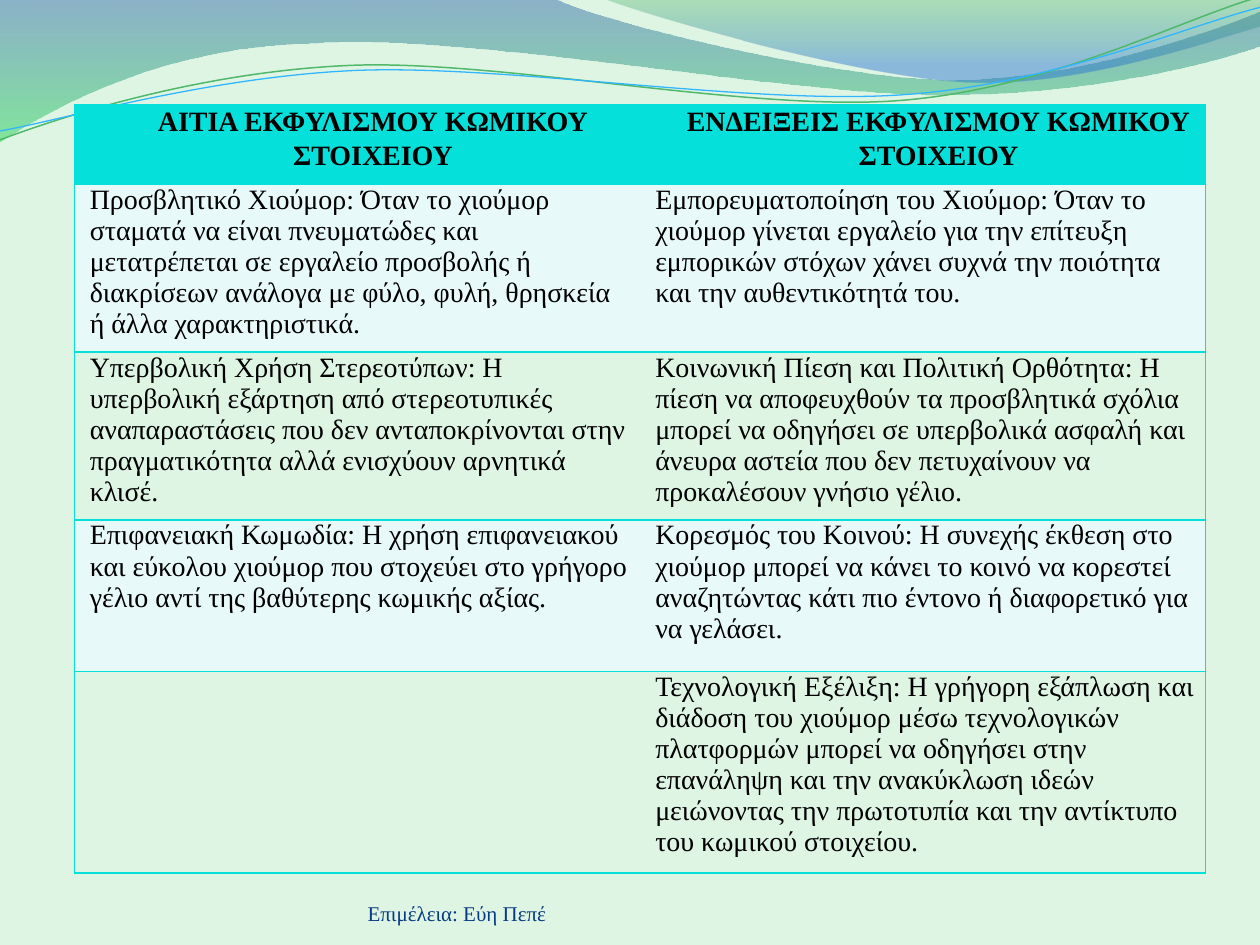
from lxml import etree
from pptx import Presentation
from pptx import util as u
from pptx.dml.color import RGBColor
from pptx.enum import text
from pptx.oxml import ns, parse_xml

FONT = "Times New Roman"
MINT, CYAN, ICE, BLACK = "DEF5E4", "05E0DB", "E7F9F8", "000000"

# Outlines in cm: a pair is a straight step, three pairs are a curve.
BANDS = [
    ([(0, 0), (11.18, -0.03),
      ((12.09, 0.43), (16.87, 1.6), (19.25, 1.6)),
      ((21.67, 1.6), (24.33, 0.66), (25.4, 0.23)),
      (25.43, 0.91),
      ((24.97, 1.12), (22.1, 1.93), (18.95, 1.91)),
      ((15.8, 1.91), (9.7, 0.71), (6.53, 0.86)),
      ((3.28, 0.91), (1.17, 2.11), (-0.03, 2.87)),
      (0, 0)],
     [(0, "2960A7", 45), (100, "35DA5E", 55)]),
    ([(12.17, -0.03),
      ((12.93, 0.28), (17.32, 1.57), (19.53, 1.65)),
      ((21.74, 1.75), (24.41, 0.81), (25.4, 0.53)),
      (25.4, 0), (12.17, -0.03)],
     [(0, "36A752", 30), (80, "2472D3", 45)]),
]
STRANDS = [
    ([(0, 2.82),
      ((1.22, 2.36), (4.01, 1.45), (7.04, 1.32)),
      ((10.03, 1.19), (15.06, 2.26), (18.11, 2.03)),
      ((21.16, 1.8), (23.83, 0.38), (25.35, -0.05))], "50B86A", 0.85),
    ([(0, 2.64),
      ((1.19, 2.44), (4.17, 1.55), (7.19, 1.42)),
      ((10.24, 1.3), (15.16, 2.13), (18.21, 1.91)),
      ((21.23, 1.7), (23.9, 0.53), (25.4, 0.15))], "31B6FD", 0.75),
]

ROWS = [
    ("ΑΙΤΙΑ ΕΚΦΥΛΙΣΜΟΥ ΚΩΜΙΚΟΥ ΣΤΟΙΧΕΙΟΥ",
     "ΕΝΔΕΙΞΕΙΣ ΕΚΦΥΛΙΣΜΟΥ ΚΩΜΙΚΟΥ ΣΤΟΙΧΕΙΟΥ"),
    ("Προσβλητικό Χιούμορ: Όταν το χιούμορ σταματά να είναι πνευματώδες και "
     "μετατρέπεται σε εργαλείο προσβολής ή διακρίσεων ανάλογα με φύλο, φυλή, "
     "θρησκεία ή άλλα χαρακτηριστικά.",
     "Εμπορευματοποίηση του Χιούμορ: Όταν το χιούμορ γίνεται εργαλείο για την "
     "επίτευξη εμπορικών στόχων χάνει συχνά την ποιότητα και την αυθεντικότητά του."),
    ("Υπερβολική Χρήση Στερεοτύπων: Η υπερβολική εξάρτηση από στερεοτυπικές "
     "αναπαραστάσεις που δεν ανταποκρίνονται στην πραγματικότητα αλλά ενισχύουν "
     "αρνητικά κλισέ.",
     "Κοινωνική Πίεση και Πολιτική Ορθότητα: Η πίεση να αποφευχθούν τα "
     "προσβλητικά σχόλια μπορεί να οδηγήσει σε υπερβολικά ασφαλή και άνευρα "
     "αστεία που δεν πετυχαίνουν να προκαλέσουν γνήσιο γέλιο."),
    ("Επιφανειακή Κωμωδία: Η χρήση επιφανειακού και εύκολου χιούμορ που "
     "στοχεύει στο γρήγορο γέλιο αντί της βαθύτερης κωμικής αξίας.",
     "Κορεσμός του Κοινού: Η συνεχής έκθεση στο χιούμορ μπορεί να κάνει το κοινό "
     "να κορεστεί αναζητώντας κάτι πιο έντονο ή διαφορετικό για να γελάσει."),
    ("",
     "Τεχνολογική Εξέλιξη: Η γρήγορη εξάπλωση και διάδοση του χιούμορ μέσω "
     "τεχνολογικών πλατφορμών μπορεί να οδηγήσει στην επανάληψη και την "
     "ανακύκλωση ιδεών μειώνοντας την πρωτοτυπία και την αντίκτυπο του κωμικού "
     "στοιχείου."),
]
ROW_HEIGHTS = [1.6, 3.05, 3.05, 3.05, 3.84]
COLUMN_WIDTH = 11.4
CREDIT = "Επιμέλεια: Εύη Πεπέ"

HEADER = {"indent": 0.64, "bold": True,
          "layout": {"alignment": text.PP_ALIGN.CENTER, "line_spacing": 1.07}}
BODY = {"indent": 0.13, "bold": False, "layout": {}}


def rgb(code):
    return RGBColor.from_string(code)


def assign(target, values):
    for name, value in values.items():
        setattr(target, name, value)


def add_outline(slide, outline, close):
    """Join the step ends by straight lines, then bend those that are curves."""
    ends = [step if len(step) == 2 else step[-1] for step in outline[1:]]
    corners = [(u.Cm(x), u.Cm(y)) for x, y in [outline[0], *ends]]
    builder = slide.shapes.build_freeform(*corners[0])
    # A closed outline already ends on its first corner.
    builder.add_line_segments(corners[1:], close=close)
    wave = builder.convert_to_shape()
    wave.shadow.inherit = False
    lines = list(wave._element.iter(ns.qn("a:lnTo")))
    for line, step in zip(lines, outline[1:]):
        if len(step) == 2:
            continue
        curve = etree.Element(ns.qn("a:cubicBezTo"))
        for x, y in step:
            etree.SubElement(curve, ns.qn("a:pt"),
                             x=str(u.Cm(x) - wave.left), y=str(u.Cm(y) - wave.top))
        line.getparent().replace(line, curve)
    return wave


def fade_down(wave, stops):
    """Fill with a see-through gradient running from top to bottom."""
    wave.fill.background()
    wave.line.fill.background()
    marks = "".join(
        f'<a:gs pos="{pos * 1000}"><a:srgbClr val="{code}">'
        f'<a:alpha val="{alpha * 1000}"/></a:srgbClr></a:gs>'
        for pos, code, alpha in stops)
    gradient = parse_xml(f'<a:gradFill {ns.nsdecls("a")} rotWithShape="1"><a:gsLst>{marks}'
                         '</a:gsLst><a:lin ang="5400000" scaled="0"/></a:gradFill>')
    props = wave._element.spPr
    props.replace(props.find(ns.qn("a:noFill")), gradient)


def set_borders(cell, hidden_side):
    props = cell._tc.get_or_add_tcPr()
    for place, side in enumerate("LRTB"):
        edge = etree.Element(ns.qn(f"a:ln{side}"), w=str(u.Pt(1)))
        if side == hidden_side:
            etree.SubElement(edge, ns.qn("a:noFill"))
        else:
            paint = etree.SubElement(edge, ns.qn("a:solidFill"))
            etree.SubElement(paint, ns.qn("a:srgbClr"), val=CYAN)
        props.insert(place, edge)


def write(paragraph, words, size, color, bold=False):
    run = paragraph.add_run()
    run.text = words
    assign(run.font, {"name": FONT, "size": u.Pt(size), "bold": bold})
    run.font.color.rgb = rgb(color)
    for script in ("ea", "cs"):
        etree.SubElement(run.font._element, ns.qn(f"a:{script}"), typeface=FONT)


def add_causes_table(slide):
    table = slide.shapes.add_table(
        len(ROWS), 2, u.Cm(1.5), u.Cm(2.11),
        u.Cm(2 * COLUMN_WIDTH), u.Cm(sum(ROW_HEIGHTS))).table
    for column in table.columns:
        column.width = u.Cm(COLUMN_WIDTH)
    for r, (entries, height) in enumerate(zip(ROWS, ROW_HEIGHTS)):
        table.rows[r].height = u.Cm(height)
        style = BODY if r else HEADER
        background = CYAN if r == 0 else (MINT, ICE)[r % 2]
        for c, words in enumerate(entries):
            cell = table.cell(r, c)
            assign(cell, {"margin_left": u.Cm(0.18), "margin_right": u.Cm(0.18),
                          "margin_top": 0, "margin_bottom": 0})
            cell.fill.solid()
            cell.fill.fore_color.rgb = rgb(background)
            set_borders(cell, "RL"[c])
            if not words:
                continue
            paragraph = cell.text_frame.paragraphs[0]
            assign(paragraph, style["layout"])
            paragraph._p.get_or_add_pPr().set("marL", str(u.Cm(style["indent"])))
            write(paragraph, words, 16, BLACK, style["bold"])


def add_credit(slide):
    frame = slide.shapes.add_textbox(u.Cm(7.41), u.Cm(17.65), u.Cm(9.32), u.Cm(1.02)).text_frame
    assign(frame, {"word_wrap": True, "vertical_anchor": text.MSO_ANCHOR.BOTTOM,
                   "margin_left": 0, "margin_right": 0, "margin_top": 0, "margin_bottom": 0})
    write(frame.paragraphs[0], CREDIT, 12, "073B81")


def main():
    deck = Presentation()
    assign(deck, {"slide_width": u.Cm(25.4), "slide_height": u.Cm(19.05)})
    slide = deck.slides.add_slide(deck.slide_layouts[6])
    slide.background.fill.solid()
    slide.background.fill.fore_color.rgb = rgb(MINT)
    for outline, stops in BANDS:
        fade_down(add_outline(slide, outline, True), stops)
    for outline, color, width in STRANDS:
        strand = add_outline(slide, outline, False)
        strand.fill.background()
        strand.line.color.rgb = rgb(color)
        strand.line.width = u.Pt(width)
    add_credit(slide)
    add_causes_table(slide)
    deck.save("out.pptx")


if __name__ == "__main__":
    main()
